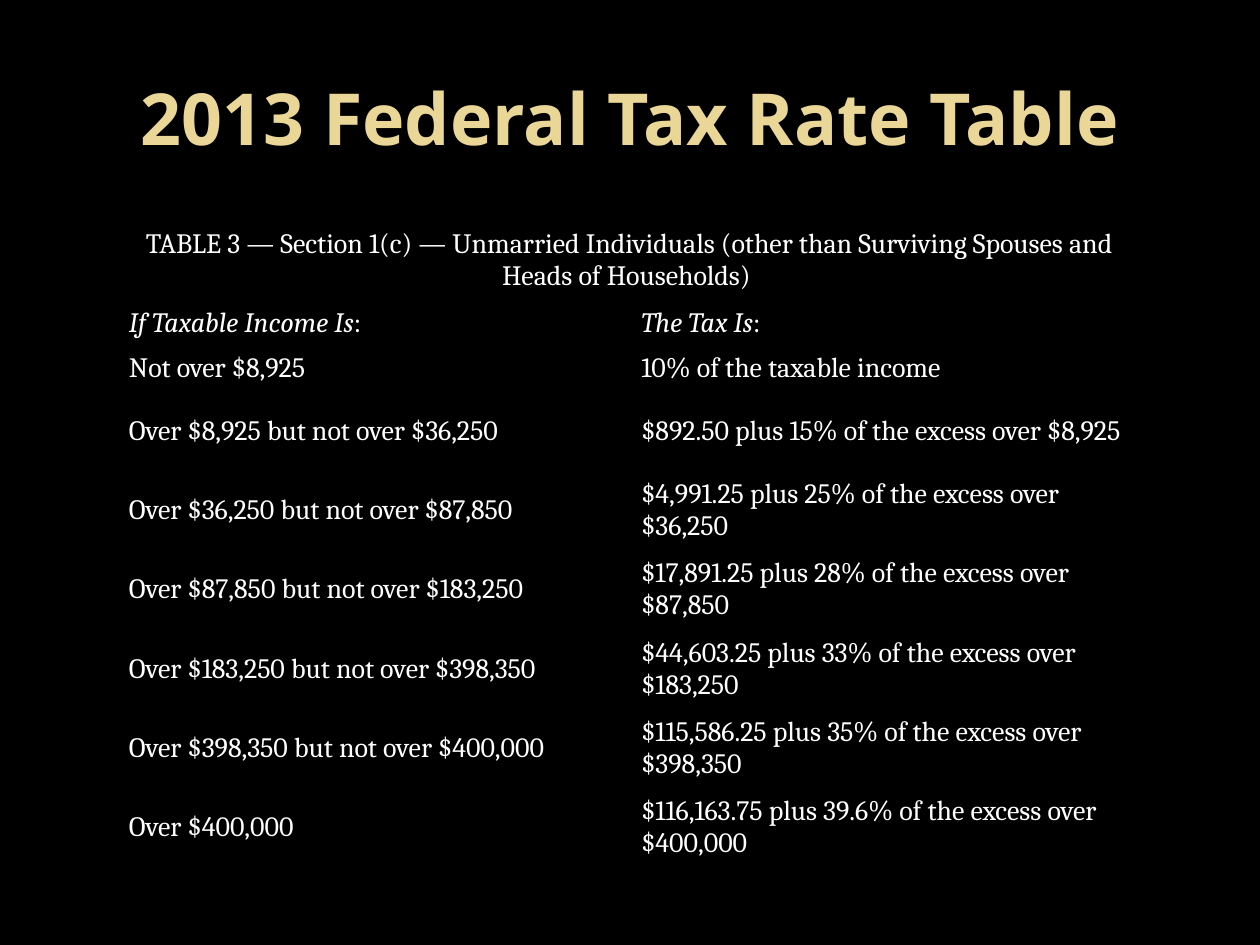
"""Build the 2013 federal tax rate slide."""
from dataclasses import dataclass

from pptx import Presentation
from pptx.dml.color import RGBColor
from pptx.enum.text import MSO_ANCHOR, PP_ALIGN
from pptx.oxml.ns import qn
from pptx.util import Cm, Pt

COLORS = {"background": "000000", "title": "EAD696", "text": "FFFFFF"}
PLAIN_TABLE_STYLE = "{2D5ABB26-0587-4C30-8999-92F81FD0307C}"
CAPTION = ("TABLE 3 — Section 1(c) — Unmarried Individuals "
           "(other than Surviving Spouses and Heads of Households) ")
HEADINGS = ("If Taxable Income Is", "The Tax Is")
COLUMN_WIDTH = 10.33
TALL_ROW, SHORT_ROW = 1.6, 0.91


@dataclass(frozen=True)
class Bracket:
    income: str
    tax: str


BRACKETS = [
    Bracket("Not over $8,925", "10% of the taxable income"),
    Bracket("Over $8,925 but not over $36,250", "$892.50 plus 15% of the excess over $8,925"),
    Bracket("Over $36,250 but not over $87,850", "$4,991.25 plus 25% of the excess over $36,250"),
    Bracket("Over $87,850 but not over $183,250", "$17,891.25 plus 28% of the excess over $87,850"),
    Bracket("Over $183,250 but not over $398,350", "$44,603.25 plus 33% of the excess over $183,250"),
    Bracket("Over $398,350 but not over $400,000", "$115,586.25 plus 35% of the excess over $398,350"),
    Bracket("Over $400,000", "$116,163.75 plus 39.6% of the excess over $400,000"),
]


def add_run(paragraph, text: str, size: float = 16, font: str = "Cambria",
            color: str = "text", bold: bool = False, italic: bool = False) -> None:
    run = paragraph.add_run()
    run.text = text
    run.font.size = Pt(size)
    run.font.name = font
    run.font.bold = bold
    run.font.italic = italic
    run.font.color.rgb = RGBColor.from_string(COLORS[color])


def add_title(slide) -> None:
    shape = slide.shapes.add_textbox(Cm(1.27), Cm(0.76), Cm(22.86), Cm(3.18))
    frame = shape.text_frame
    frame.word_wrap = True
    frame.vertical_anchor = MSO_ANCHOR.MIDDLE
    paragraph = frame.paragraphs[0]
    paragraph.alignment = PP_ALIGN.CENTER
    add_run(paragraph, "2013 Federal Tax Rate Table", 41, "Noto Sans", "title", bold=True)


def add_rate_table(slide) -> None:
    heights = [TALL_ROW] + [SHORT_ROW] * 2 + [TALL_ROW] * (len(BRACKETS) - 1)
    shape = slide.shapes.add_table(len(heights), 2, Cm(2.36), Cm(4.45),
                                   Cm(2 * COLUMN_WIDTH), Cm(sum(heights)))
    table = shape.table
    table.first_row = table.horz_banding = False
    table._tbl.tblPr.find(qn("a:tableStyleId")).text = PLAIN_TABLE_STYLE
    for column in table.columns:
        column.width = Cm(COLUMN_WIDTH)
    for row, height in zip(table.rows, heights):
        row.height = Cm(height)
    for cell in table.iter_cells():
        cell.fill.background()
        cell.vertical_anchor = MSO_ANCHOR.MIDDLE
        cell.margin_left = cell.margin_right = Cm(0.24)
        cell.margin_top = cell.margin_bottom = Cm(0.12)

    caption = table.cell(0, 0)
    caption.merge(table.cell(0, 1))
    paragraph = caption.text_frame.paragraphs[0]
    paragraph.alignment = PP_ALIGN.CENTER
    add_run(paragraph, CAPTION)
    for column, heading in enumerate(HEADINGS):
        paragraph = table.cell(1, column).text_frame.paragraphs[0]
        add_run(paragraph, heading, italic=True)
        add_run(paragraph, ":")
    for row, bracket in enumerate(BRACKETS, start=2):
        for column, text in enumerate((bracket.income, bracket.tax)):
            add_run(table.cell(row, column).text_frame.paragraphs[0], text)


def main() -> None:
    presentation = Presentation()
    presentation.slide_width, presentation.slide_height = Cm(25.4), Cm(19.05)
    slide = presentation.slides.add_slide(presentation.slide_layouts[6])
    slide.background.fill.solid()
    slide.background.fill.fore_color.rgb = RGBColor.from_string(COLORS["background"])
    add_title(slide)
    add_rate_table(slide)
    presentation.save("out.pptx")


if __name__ == "__main__":
    main()
